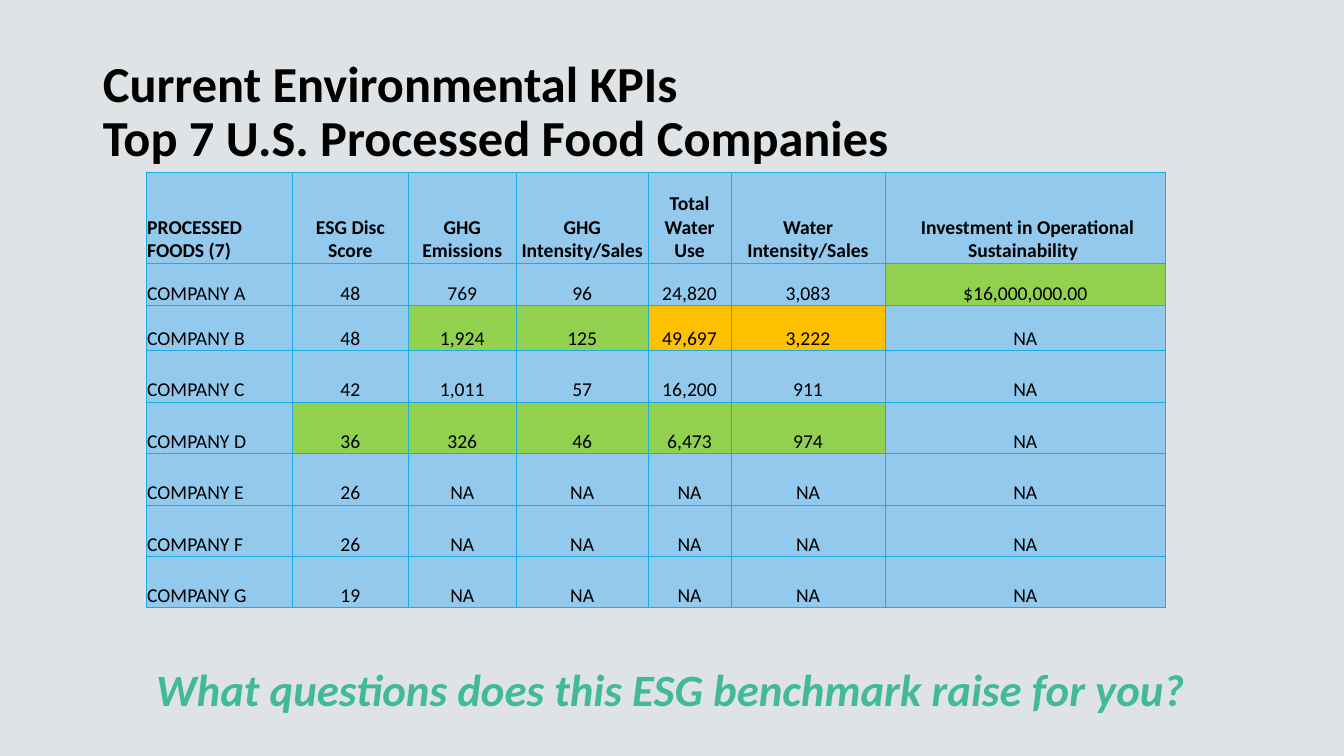
import lxml.etree
import pptx
import pptx.dml.color
import pptx.enum.text
import pptx.oxml.ns
import pptx.util

Inches = pptx.util.Inches
COLORS = {
    "background": "DFE3E5",
    "text": "000000",
    "question": "42BA97",
    "cell": "92C9ED",
    "border": "1CADE4",
    "green": "92D050",
    "amber": "FFC000",
}
COLUMN_WIDTHS = [1.45, 1.15, 1.07, 1.31, 0.82, 1.53, 2.78]
ROW_HEIGHTS = [0.9, 0.42, 0.45] + [0.51] * 5
KPI_ROWS = [
    ["PROCESSED FOODS (7)", "ESG Disc Score", "GHG Emissions", "GHG Intensity/Sales",
     "Total Water Use", "Water Intensity/Sales", " Investment in Operational Sustainability "],
    ["COMPANY A", "48", "769", "96", "24,820", "3,083", " $16,000,000.00 "],
    ["COMPANY B", "48", "1,924", "125", "49,697", "3,222", " NA "],
    ["COMPANY C", "42", "1,011", "57", "16,200", "911", " NA "],
    ["COMPANY D", "36", "326", "46", "6,473", "974", " NA "],
    ["COMPANY E", "26", "NA", "NA", "NA", "NA", " NA "],
    ["COMPANY F", "26", "NA", "NA", "NA", "NA", " NA "],
    ["COMPANY G", "19", "NA", "NA", "NA", "NA", " NA "],
]
# (row, column) of each highlighted cell
HIGHLIGHTS = {(1, 6): "green", (2, 2): "green", (2, 3): "green", (2, 4): "amber", (2, 5): "amber"}
HIGHLIGHTS.update({(4, column): "green" for column in range(1, 6)})


def add_run(paragraph, text, size, color="text", bold=False, italic=False):
    run = paragraph.add_run()
    run.text = text
    run.font.name = "Calibri"
    run.font.size = pptx.util.Pt(size)
    run.font.bold = bold
    run.font.italic = italic
    run.font.color.rgb = pptx.dml.color.RGBColor.from_string(COLORS[color])


def add_borders(cell):
    """Draw a thin line on all four sides; lines must precede the cell's fill."""
    qn = pptx.oxml.ns.qn
    properties = cell._tc.get_or_add_tcPr()
    for position, side in enumerate(["a:lnL", "a:lnR", "a:lnT", "a:lnB"]):
        line = lxml.etree.Element(qn(side), w=str(pptx.util.Pt(0.5)))
        fill = lxml.etree.SubElement(line, qn("a:solidFill"))
        lxml.etree.SubElement(fill, qn("a:srgbClr"), val=COLORS["border"])
        properties.insert(position, line)


presentation = pptx.Presentation()
presentation.slide_width = Inches(13.33)
presentation.slide_height = Inches(7.5)
slide = presentation.slides.add_slide(presentation.slide_layouts[5])
slide.background.fill.solid()
slide.background.fill.fore_color.rgb = pptx.dml.color.RGBColor.from_string(COLORS["background"])

# Title
title = slide.shapes.title
title.left, title.top, title.width, title.height = map(Inches, [0.92, 0.4, 11.5, 1.45])
title.text_frame.vertical_anchor = pptx.enum.text.MSO_ANCHOR.MIDDLE
title.text_frame.auto_size = pptx.enum.text.MSO_AUTO_SIZE.NONE
paragraph = title.text_frame.paragraphs[0]
paragraph.alignment = pptx.enum.text.PP_ALIGN.LEFT
paragraph.line_spacing = 0.9
add_run(paragraph, "Current Environmental KPIs ", 36, bold=True)
paragraph.add_line_break()
add_run(paragraph, "Top 7 U.S. Processed Food Companies", 36, bold=True)

# Closing question
question = slide.shapes.add_textbox(Inches(1.45), Inches(6.52), Inches(12.2), Inches(0.64))
question.text_frame.word_wrap = True
question.text_frame.auto_size = pptx.enum.text.MSO_AUTO_SIZE.SHAPE_TO_FIT_TEXT
add_run(question.text_frame.paragraphs[0], "What questions does this ESG benchmark raise for you?",
        32, "question", bold=True, italic=True)

# KPI table
table = slide.shapes.add_table(
    len(ROW_HEIGHTS), len(COLUMN_WIDTHS),
    Inches(1.45), Inches(1.71), Inches(sum(COLUMN_WIDTHS)), Inches(sum(ROW_HEIGHTS)),
).table
for column, width in zip(table.columns, COLUMN_WIDTHS):
    column.width = Inches(width)
for row, height in zip(table.rows, ROW_HEIGHTS):
    row.height = Inches(height)

for row_index, values in enumerate(KPI_ROWS):
    for column_index, value in enumerate(values):
        cell = table.cell(row_index, column_index)
        cell.vertical_anchor = pptx.enum.text.MSO_ANCHOR.BOTTOM
        cell.margin_left = cell.margin_right = cell.margin_top = Inches(0.01)
        cell.margin_bottom = 0
        color = HIGHLIGHTS.get((row_index, column_index), "cell")
        cell.fill.solid()
        cell.fill.fore_color.rgb = pptx.dml.color.RGBColor.from_string(COLORS[color])
        add_borders(cell)
        paragraph = cell.text_frame.paragraphs[0]
        if column_index > 0:
            paragraph.alignment = pptx.enum.text.PP_ALIGN.CENTER
        add_run(paragraph, value, 14, bold=row_index == 0)

presentation.save("out.pptx")
